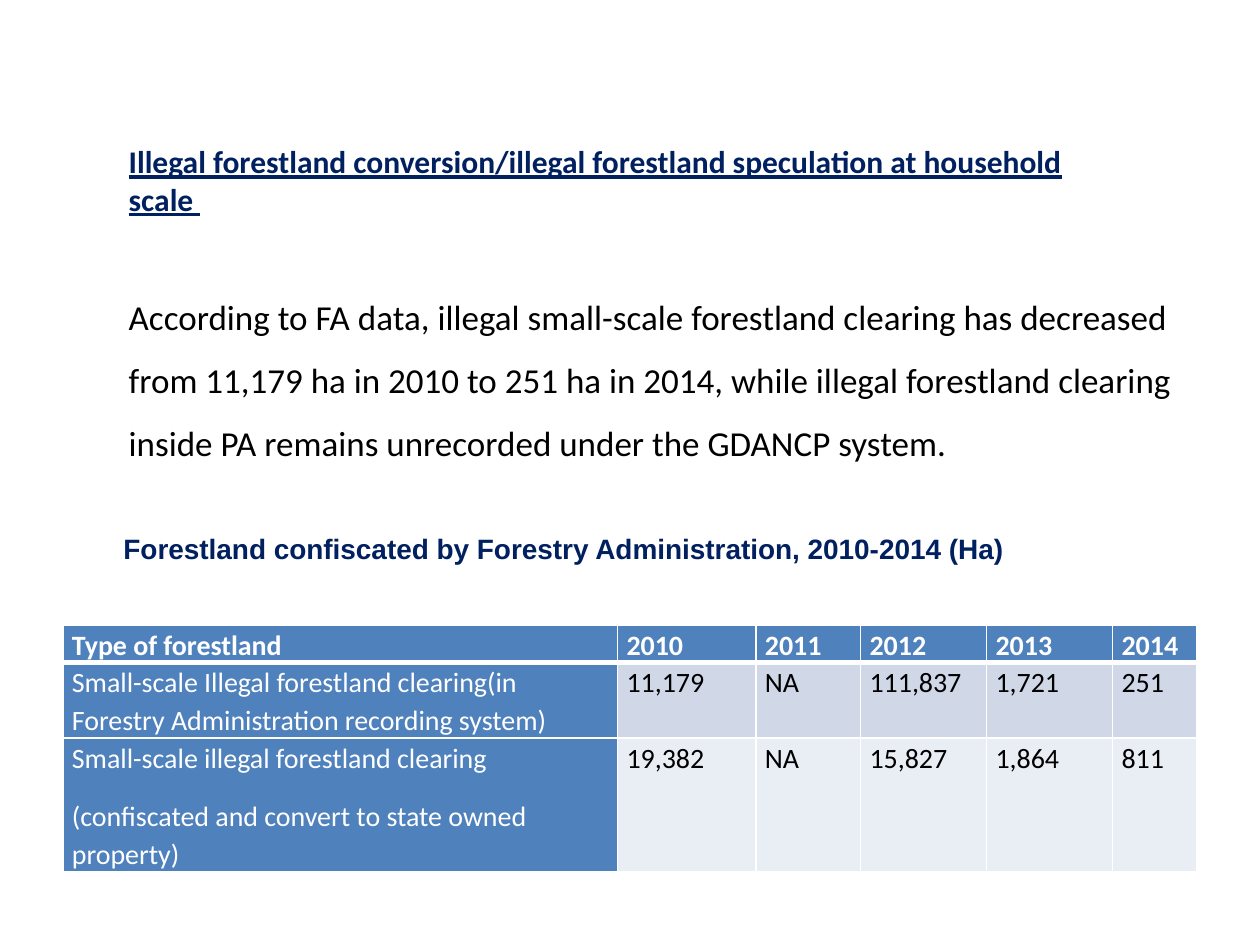
from lxml.etree import SubElement
from pptx import Presentation
from pptx.dml.color import RGBColor
from pptx.enum.text import MSO_ANCHOR, MSO_AUTO_SIZE, PP_ALIGN
from pptx.oxml.ns import qn
from pptx.util import Cm, Pt

NAVY = RGBColor(0x00, 0x20, 0x60)
BLACK = RGBColor(0x00, 0x00, 0x00)
WHITE = RGBColor(0xFF, 0xFF, 0xFF)
BLUE = RGBColor(0x4F, 0x81, 0xBD)
BANDS = [RGBColor(0xD0, 0xD8, 0xE8), RGBColor(0xE9, 0xED, 0xF4)]

HEADING = "Illegal forestland conversion/illegal forestland speculation at household scale "
BODY = (
    "According to FA data, illegal small-scale forestland clearing has decreased "
    "from 11,179 ha in 2010 to 251 ha in 2014, while illegal forestland clearing "
    "inside PA remains unrecorded under the GDANCP system."
)
CAPTION = "Forestland confiscated by Forestry Administration, 2010-2014 (Ha)"
ROWS = [
    ["Type of forestland", "2010", "2011", "2012", "2013", "2014"],
    ["Small-scale Illegal forestland clearing(in Forestry Administration recording system)",
     "11,179", "NA", "111,837", "1,721", "251"],
    ["Small-scale illegal forestland clearing\n(confiscated and convert to state owned property)",
     "19,382", "NA", "15,827", "1,864", "811"],
]
COL_WIDTHS = [11.18, 2.79, 2.11, 2.54, 2.54, 1.7]
ROW_HEIGHTS = [0.74, 1.5, 2.65]


def write(tf, text, size, color, font="Calibri", bold=False, underline=False,
          align=PP_ALIGN.LEFT, line=1.0, gap=0):
    tf.word_wrap = True
    for i, part in enumerate(text.split("\n")):
        p = tf.add_paragraph() if i else tf.paragraphs[0]
        p.alignment = align
        p.line_spacing = line
        p.space_before = p.space_after = Pt(gap)
        r = p.add_run()
        r.text = part
        r.font.name = font
        r.font.size = Pt(size)
        r.font.bold = bold
        r.font.underline = underline
        r.font.color.rgb = color


def place(sp, left, top, width, height, anchor=MSO_ANCHOR.TOP):
    sp.left, sp.top, sp.width, sp.height = Cm(left), Cm(top), Cm(width), Cm(height)
    tf = sp.text_frame
    tf.auto_size = MSO_AUTO_SIZE.NONE
    tf.vertical_anchor = anchor
    return tf


def remove_bullet(p):
    pPr = p._p.get_or_add_pPr()
    pPr.set("marL", "0")
    pPr.set("indent", "0")
    SubElement(pPr, qn("a:buNone"))


def add_borders(cell, **widths):
    tcPr = cell._tc.get_or_add_tcPr()
    for side, width in widths.items():
        ln = SubElement(tcPr, qn(f"a:ln{side}"), w=str(Pt(width)))
        fill = SubElement(ln, qn("a:solidFill"))
        SubElement(fill, qn("a:srgbClr"), val=str(WHITE))


def format_cell(cell, text, row, col):
    header, label = row == 0, col == 0
    add_borders(cell, L=1, R=1, T=3 if row == 1 else 1, B=3 if header else 1)
    cell.fill.solid()
    cell.fill.fore_color.rgb = BLUE if header or label else BANDS[row - 1]
    cell.margin_left = cell.margin_right = Cm(0.18)
    cell.margin_top = cell.margin_bottom = 0
    write(cell.text_frame, text, 16, WHITE if header or label else BLACK, bold=header,
          align=PP_ALIGN.LEFT if label and not header else PP_ALIGN.JUSTIFY,
          line=1.1, gap=6)


def add_data_table(s):
    frame = s.shapes.add_table(len(ROWS), len(COL_WIDTHS), Cm(1.27), Cm(12.6),
                               Cm(sum(COL_WIDTHS)), Cm(sum(ROW_HEIGHTS)))
    table = frame.table
    for column, width in zip(table.columns, COL_WIDTHS):
        column.width = Cm(width)
    for i, (values, height) in enumerate(zip(ROWS, ROW_HEIGHTS)):
        table.rows[i].height = Cm(height)
        for j, text in enumerate(values):
            format_cell(table.cell(i, j), text, i, j)


def main():
    prs = Presentation()
    prs.slide_width, prs.slide_height = Cm(25.4), Cm(19.05)
    s = prs.slides.add_slide(prs.slide_layouts[1])

    tf = place(s.shapes.title, 2.34, 2.74, 19.69, 2.64)
    write(tf, HEADING, 18, NAVY, bold=True, underline=True)

    tf = place(s.placeholders[1], 2.34, 5.41, 22.43, 4.11)
    write(tf, BODY, 20, BLACK, line=1.5)
    remove_bullet(tf.paragraphs[0])

    add_data_table(s)

    caption = s.shapes.add_textbox(0, 0, 0, 0)
    tf = place(caption, 2.24, 10.59, 18.49, 0.94, MSO_ANCHOR.MIDDLE)
    write(tf, CAPTION, 16, NAVY, font="Arial", bold=True)

    prs.save("out.pptx")


if __name__ == "__main__":
    main()
